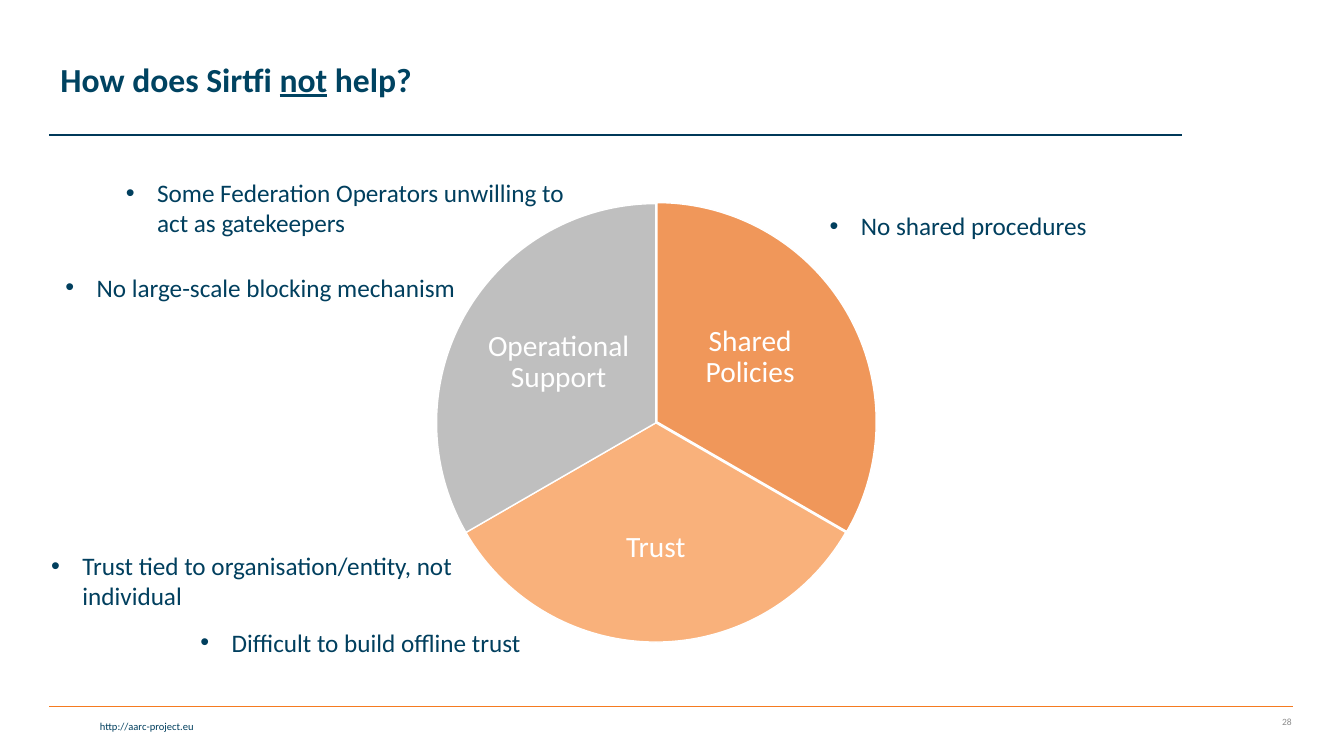
from dataclasses import dataclass

from lxml import etree
from pptx import Presentation
from pptx.dml.color import RGBColor
from pptx.enum.shapes import MSO_CONNECTOR, MSO_SHAPE
from pptx.enum.text import MSO_ANCHOR, PP_ALIGN
from pptx.oxml.ns import qn
from pptx.slide import Slide
from pptx.text.text import TextFrame, _Paragraph
from pptx.util import Inches, Pt

PIE = MSO_SHAPE.PIE
STRAIGHT = MSO_CONNECTOR.STRAIGHT
MIDDLE, TOP = MSO_ANCHOR.MIDDLE, MSO_ANCHOR.TOP
LEFT, CENTER, RIGHT = PP_ALIGN.LEFT, PP_ALIGN.CENTER, PP_ALIGN.RIGHT
FONT, NAVY, WHITE = "Calibri", "013F5E", "FFFFFF"
DISC = 4.35
Box = tuple[float, float, float, float]


@dataclass
class Wedge:
    text: str
    left: float
    top: float
    start: int  # degrees, clockwise from three o'clock
    fill: str
    alpha: int
    label: Box


@dataclass
class Note:
    text: str
    left: float
    top: float
    height: float = 0.4


WEDGES = [
    Wedge("Shared Policies", 4.34, 2.01, 270, "ED7D31", 80, (6.7, 2.82, 1.48, 1.45)),
    Wedge("Trust", 4.33, 2.02, 30, "F6791C", 58, (5.52, 4.76, 1.97, 1.35)),
    Wedge("Operational Support", 4.33, 2.02, 150, "BFBFBF", 100, (4.8, 2.87, 1.48, 1.45)),
]
NOTES = [
    Note("Some Federation Operators unwilling to act as gatekeepers", 1.15, 1.71, 0.71),
    Note("Trust tied to organisation/entity, not individual", 0.41, 5.41, 0.71),
    Note("No large-scale blocking mechanism", 0.55, 2.65),
    Note("Difficult to build offline trust", 1.89, 6.17),
    Note("No shared procedures", 8.13, 2.04),
]


def rgb(code: str) -> RGBColor:
    return RGBColor.from_string(code)


def style(para: _Paragraph, size: float, color: str, align: PP_ALIGN = LEFT) -> None:
    para.alignment = align
    para.font.name = FONT
    para.font.size = Pt(size)
    para.font.color.rgb = rgb(color)


def add_text(slide: Slide, box: Box, text: str, anchor: MSO_ANCHOR = TOP) -> TextFrame:
    frame = slide.shapes.add_textbox(*map(Inches, box)).text_frame
    frame.word_wrap = True
    frame.vertical_anchor = anchor
    frame.text = text
    return frame


def add_rule(slide: Slide, left: float, right: float, y: float, color: str) -> None:
    rule = slide.shapes.add_connector(
        STRAIGHT, Inches(left), Inches(y), Inches(right), Inches(y))
    rule.line.color.rgb = rgb(color)
    rule.line.width = Pt(1)
    etree.SubElement(rule._element.spPr, qn("a:effectLst"))


def add_wedge(slide: Slide, wedge: Wedge) -> None:
    pie = slide.shapes.add_shape(
        PIE, Inches(wedge.left), Inches(wedge.top), Inches(DISC), Inches(DISC))
    pie.shadow.inherit = False
    # Angles are stored in 60000ths of a degree, adjustments in 100000ths.
    pie.adjustments[0] = wedge.start * 0.6
    pie.adjustments[1] = (wedge.start + 120) % 360 * 0.6
    pie.fill.solid()
    pie.fill.fore_color.rgb = rgb(wedge.fill)
    if wedge.alpha < 100:
        color = pie._element.spPr.find(qn("a:solidFill"))[0]
        etree.SubElement(color, qn("a:alpha"), val=str(wedge.alpha * 1000))
    pie.line.color.rgb = rgb(WHITE)
    pie.line.width = Pt(1)

    frame = add_text(slide, wedge.label, wedge.text, MIDDLE)
    frame.margin_left = frame.margin_right = Inches(0.03)
    frame.margin_top = frame.margin_bottom = Inches(0.03)
    para = frame.paragraphs[0]
    para.line_spacing = 0.9
    style(para, 21, WHITE, CENTER)


def add_note(slide: Slide, note: Note) -> None:
    frame = add_text(slide, (note.left, note.top, 4.6, note.height), note.text)
    para = frame.paragraphs[0]
    props = para._p.get_or_add_pPr()
    props.set("marL", str(Inches(0.31)))
    props.set("indent", str(-Inches(0.31)))
    etree.SubElement(props, qn("a:buFont"), typeface="Arial")
    etree.SubElement(props, qn("a:buChar"), char="•")
    style(para, 18, NAVY)


def set_title(slide: Slide) -> None:
    title = slide.shapes.title
    title.left, title.top = Inches(0.5), Inches(0.08)
    title.width, title.height = Inches(10.51), Inches(1.45)
    frame = title.text_frame
    frame.word_wrap = True
    frame.vertical_anchor = MIDDLE
    para = frame.paragraphs[0]
    for text in ("How does Sirtfi ", "not", " help?"):
        run = para.add_run()
        run.text = text
        if text == "not":
            run.font.underline = True
    para.line_spacing = 0.9
    style(para, 24, "004361")
    para.font.bold = True


def main() -> None:
    deck = Presentation()
    deck.slide_width, deck.slide_height = Inches(13.33), Inches(7.5)
    slide = deck.slides.add_slide(deck.slide_layouts.get_by_name("Title Only"))

    add_rule(slide, 0.49, 12.82, 7.01, "F57B20")
    add_rule(slide, 0.49, 11.72, 1.34, "003959")
    link = add_text(slide, (0.03, 7.09, 1.99, 0.23), "http://aarc-project.eu")
    style(link.paragraphs[0], 7.5, "003F5E", RIGHT)
    page = add_text(slide, (12.1, 7.01, 0.81, 0.3), "28", MIDDLE)
    style(page.paragraphs[0], 6.8, "8C8C8C", RIGHT)

    set_title(slide)
    for wedge in WEDGES:
        add_wedge(slide, wedge)
    for note in NOTES:
        add_note(slide, note)
    deck.save("out.pptx")


if __name__ == "__main__":
    main()
